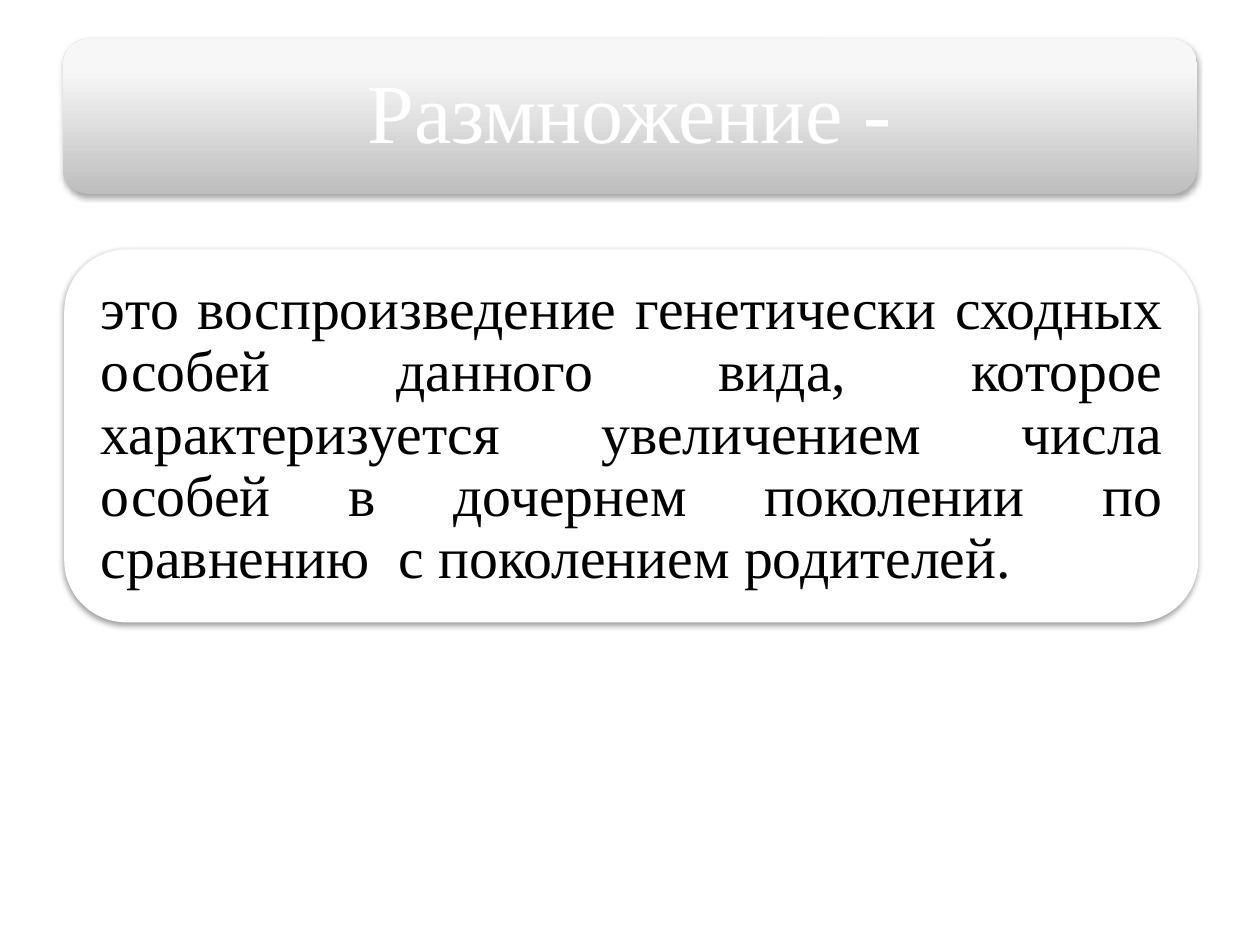
from copy import deepcopy

from lxml.etree import SubElement
from pptx import Presentation
from pptx.dml.color import RGBColor
from pptx.enum.shapes import MSO_SHAPE
from pptx.enum.text import MSO_ANCHOR, PP_ALIGN
from pptx.oxml.ns import qn
from pptx.util import Inches, Pt

WHITE = RGBColor(0xFF, 0xFF, 0xFF)
BLACK = RGBColor(0, 0, 0)
GREY = RGBColor(0xBE, 0xBE, 0xBE)
PALE = RGBColor(0xF7, 0xF7, 0xF7)
PALEST = RGBColor(0xF8, 0xF8, 0xF8)

prs = Presentation()
prs.slide_width, prs.slide_height = Inches(10), Inches(7.5)
slide = prs.slides.add_slide(prs.slide_layouts[6])


def add_shadow(s, opacity, distance):
    """Cast a soft black shadow straight down."""
    s.shadow.inherit = False
    effects = s._element.spPr.find(qn("a:effectLst"))
    shadow = SubElement(effects, qn("a:outerShdw"), blurRad=str(Pt(3.1)),
                        dist=str(Pt(distance)), dir="5400000", rotWithShape="0")
    color = SubElement(shadow, qn("a:srgbClr"), val=str(BLACK))
    SubElement(color, qn("a:alpha"), val=str(opacity * 1000))


def paint(s, stops):
    """Fill with one colour, or with a gradient rising from the bottom."""
    if len(stops) == 1:
        s.fill.solid()
        s.fill.fore_color.rgb = stops[0][1]
        return
    s.fill.gradient()
    s.fill.gradient_angle = 90
    stop_list = s._element.spPr.find(qn("a:gradFill")).find(qn("a:gsLst"))
    while len(stop_list) < len(stops):
        stop_list.append(deepcopy(stop_list[0]))
    for stop, (position, color) in zip(s.fill.gradient_stops, stops):
        stop.position = position
        stop.color.rgb = color


panels = [
    dict(box=(0.5, 0.31, 9, 1.23), stops=[(0, GREY), (0.8, PALE), (1, PALEST)],
         opacity=35, distance=1.8, text_box=(0.56, 0.37, 8.88, 1.11), inset=0.2,
         text="Размножение -", align=PP_ALIGN.CENTER, size=48, color=WHITE),
    dict(box=(0.51, 1.98, 9, 2.96), stops=[(0, WHITE)],
         opacity=38, distance=1.6, text_box=(0.66, 2.12, 8.71, 2.67), inset=0.14,
         text="это воспроизведение генетически сходных особей данного вида, "
              "которое характеризуется увеличением числа особей в дочернем "
              "поколении по сравнению  с поколением родителей.",
         align=PP_ALIGN.JUSTIFY, size=33, color=BLACK),
]

for panel in panels:
    s = slide.shapes.add_shape(MSO_SHAPE.ROUNDED_RECTANGLE, *map(Inches, panel["box"]))
    paint(s, panel["stops"])
    s.line.fill.background()
    add_shadow(s, panel["opacity"], panel["distance"])

    tf = slide.shapes.add_textbox(*map(Inches, panel["text_box"])).text_frame
    tf.word_wrap = True
    tf.vertical_anchor = MSO_ANCHOR.MIDDLE
    for side in ("left", "top", "right", "bottom"):
        setattr(tf, f"margin_{side}", Inches(panel["inset"]))
    p = tf.paragraphs[0]
    p.alignment = panel["align"]
    p.line_spacing = 0.9
    after = SubElement(p._p.get_or_add_pPr(), qn("a:spcAft"))
    SubElement(after, qn("a:spcPct"), val="35000")
    r = p.add_run()
    r.text = panel["text"]
    r.font.name = "Times New Roman"
    r.font.size = Pt(panel["size"])
    r.font.color.rgb = panel["color"]

prs.save("out.pptx")
